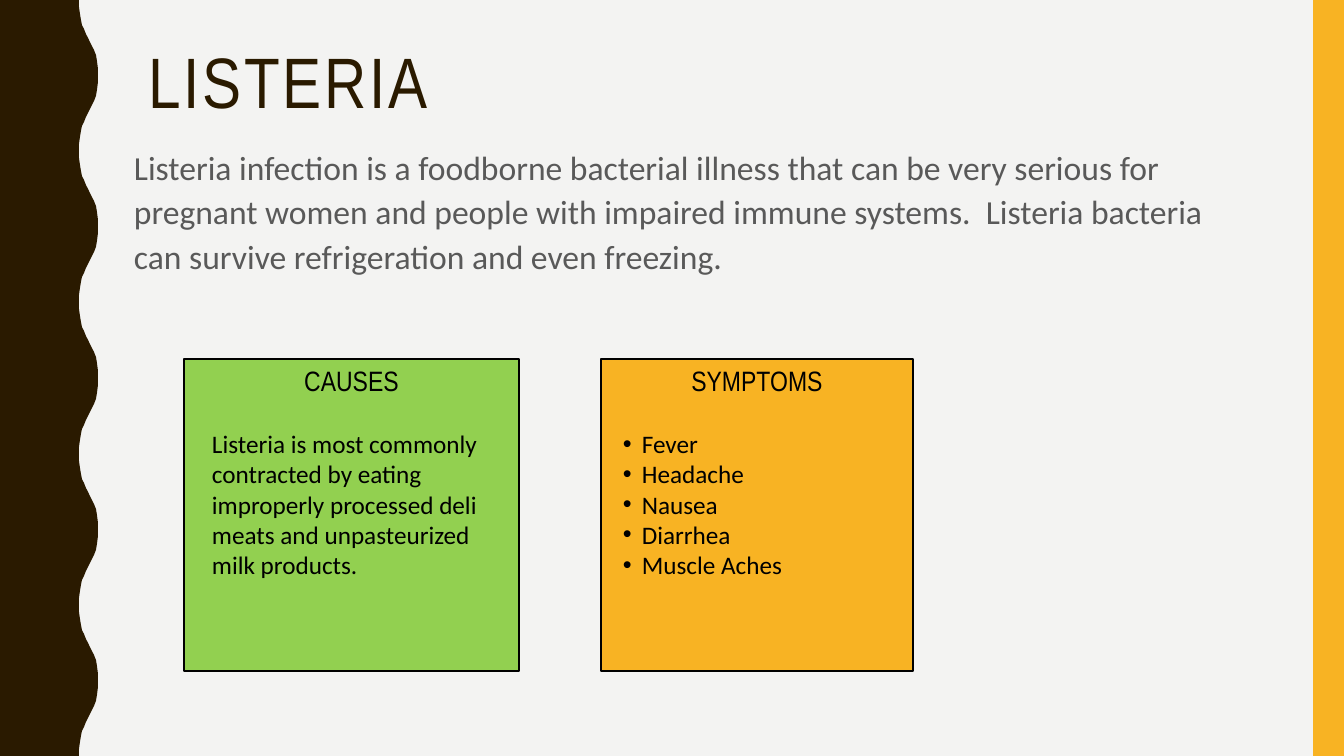
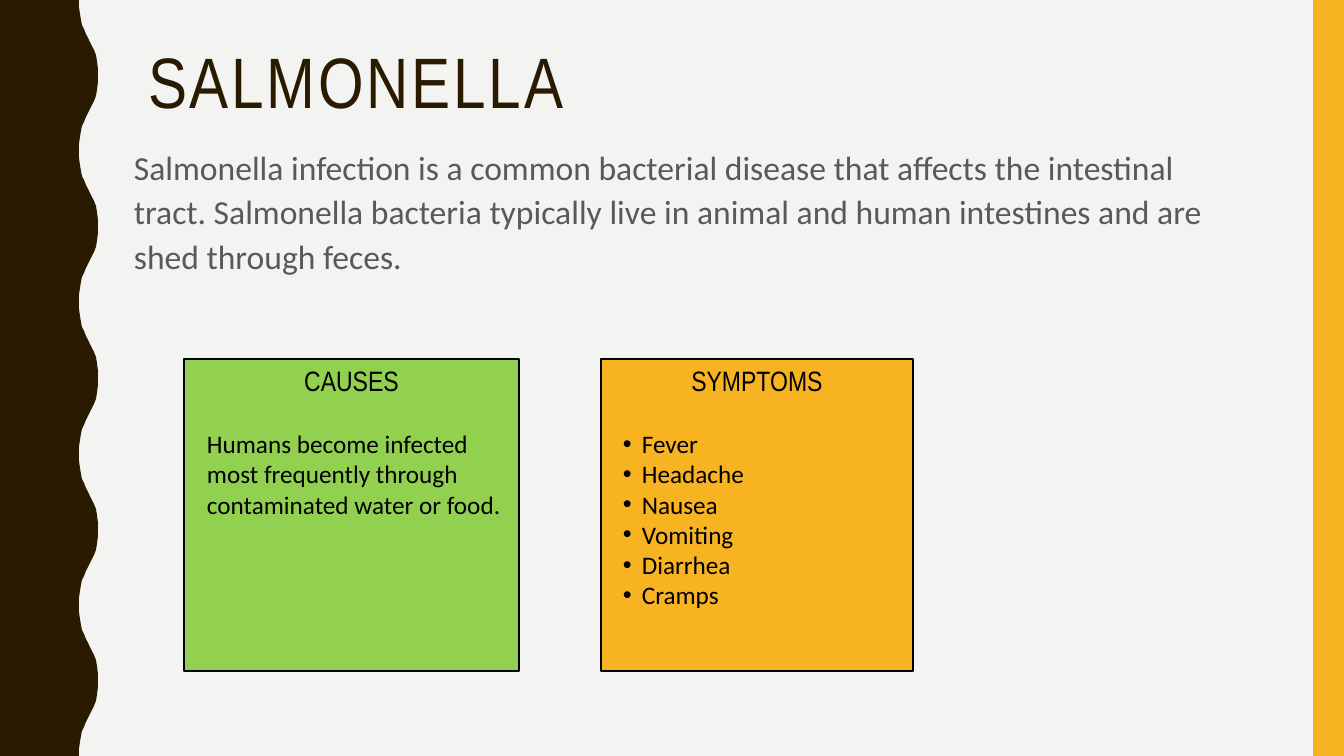
from lxml import etree
from pptx import Presentation
from pptx.dml.color import RGBColor
from pptx.enum.shapes import MSO_SHAPE
from pptx.enum.text import MSO_ANCHOR, MSO_AUTO_SIZE, PP_ALIGN
from pptx.oxml.ns import qn
from pptx.util import Emu, Pt

RECTANGLE = MSO_SHAPE.RECTANGLE
TOP = MSO_ANCHOR.TOP
NO_AUTOFIT = MSO_AUTO_SIZE.NONE
LEFT, CENTER = PP_ALIGN.LEFT, PP_ALIGN.CENTER

PAPER = RGBColor(0xF3, 0xF3, 0xF2)
BROWN = RGBColor(0x2A, 0x1A, 0x00)
AMBER = RGBColor(0xF8, 0xB3, 0x23)
GREEN = RGBColor(0x92, 0xD0, 0x50)
GRAY = RGBColor(0x59, 0x59, 0x59)
BLACK = RGBColor(0x00, 0x00, 0x00)

HEADING_FONT, BODY_FONT = "Arial Narrow", "Calibri"
EMU_PER_PX = 914400 / 100.8
WIDTH, HEIGHT = 1344, 756
WAVE_COUNT = 5
HALF_WAVE = [(79, 0), (79, 7), (80, 14), (81, 20), (82, 25), (84, 29), (86, 34), (88, 38),
             (90, 42), (92, 46), (94, 50), (96, 55), (97, 61), (98, 69), (98, 76)]

ILLNESSES = [
    {
        "title": "LISTERIA",
        "summary": "Listeria infection is a foodborne bacterial illness that can be very serious for "
                   "pregnant women and people with impaired immune systems.  Listeria bacteria can "
                   "survive refrigeration and even freezing.",
        "cause": "Listeria is most commonly contracted by eating improperly processed deli meats "
                 "and unpasteurized milk products.",
        "cause_indent": 18,
        "symptoms": ["Fever", "Headache", "Nausea", "Diarrhea", "Muscle Aches"],
    },
    {
        "title": "SALMONELLA",
        "summary": "Salmonella infection is a common bacterial disease that affects the intestinal "
                   "tract. Salmonella bacteria typically live in animal and human intestines and are "
                   "shed through feces.",
        "cause": "Humans become infected most frequently through contaminated water or food.",
        "cause_indent": 13,
        "symptoms": ["Fever", "Headache", "Nausea", "Vomiting", "Diarrhea", "Cramps"],
    },
]


def px(length):
    """Turn pixels into EMU."""
    return Emu(round(length * EMU_PER_PX))


class IllnessDeck:
    """Holds the shared style and the current slide."""

    def __init__(self):
        """Start an empty deck with the shared background."""
        self.deck = Presentation()
        self.deck.slide_width, self.deck.slide_height = px(WIDTH), px(HEIGHT)
        self.paint(self.deck.slide_master.background, PAPER)
        self.page = None

    @staticmethod
    def paint(target, color):
        """Give a shape or background a solid fill."""
        target.fill.solid()
        target.fill.fore_color.rgb = color

    @staticmethod
    def style(para, font, size, color, align=LEFT):
        """Format the runs and alignment of a paragraph."""
        para.alignment = align
        for span in para.runs:
            span.font.name, span.font.size = font, Pt(size)
            span.font.color.rgb = color

    @staticmethod
    def indent(para, margin, bullet=False):
        """Indent a paragraph and optionally give it a hanging bullet."""
        properties = para._p.get_or_add_pPr()
        properties.set("marL", str(px(margin)))
        properties.set("indent", str(px(-19 if bullet else 0)))
        if bullet:
            etree.SubElement(properties, qn("a:buFont")).set("typeface", "Arial")
            etree.SubElement(properties, qn("a:buChar")).set("char", "•")

    @staticmethod
    def frame(box):
        """Return a wrapping, top-anchored text frame."""
        frame = box.text_frame
        frame.word_wrap, frame.auto_size, frame.vertical_anchor = True, NO_AUTOFIT, TOP
        return frame

    def add_page(self, title):
        """Add a slide with its bands and title."""
        self.page = self.deck.slides.add_slide(self.deck.slide_layouts[5])
        self.wavy_band()
        self.rectangle(1313, 0, WIDTH - 1313, HEIGHT, AMBER)
        self.title(title)

    def wavy_band(self):
        """Draw the left band with its repeated wave."""
        period = HEIGHT / WAVE_COUNT
        wave = HALF_WAVE + [(x, period - y) for x, y in reversed(HALF_WAVE[:-1])]
        edge = [(x, y + period * number) for number in range(WAVE_COUNT) for x, y in wave]
        builder = self.page.shapes.build_freeform(0, 0, scale=EMU_PER_PX)
        builder.add_line_segments(edge + [(0, HEIGHT)], close=True)
        band = builder.convert_to_shape()
        band.shadow.inherit = False
        self.paint(band, BROWN)
        band.line.fill.background()

    def rectangle(self, left, top, width, height, color):
        """Draw a plain filled rectangle."""
        box = self.page.shapes.add_shape(RECTANGLE, px(left), px(top), px(width), px(height))
        box.shadow.inherit = False
        self.paint(box, color)
        box.line.fill.background()
        return box

    def title(self, text):
        """Place and format the title placeholder."""
        box = self.page.shapes.title
        box.left, box.top, box.width, box.height = px(138), px(42), px(1122), px(97)
        para = self.frame(box).paragraphs[0]
        para.text = text
        para.line_spacing = 0.9
        self.style(para, HEADING_FONT, 51, BROWN)
        para.runs[0].font._element.set("spc", "200")

    def summary(self, text):
        """Add the introductory paragraph."""
        box = self.page.shapes.add_textbox(px(124), px(138), px(1122), px(162))
        para = self.frame(box).paragraphs[0]
        para.text = text
        para.line_spacing, para.space_before = 1.1, Pt(7)
        self.style(para, BODY_FONT, 24, GRAY)

    def card(self, left, width, color, heading, lines, margin, bullet=False):
        """Add an outlined card with a heading and body lines."""
        box = self.rectangle(left, 359, width, 312, color)
        box.line.color.rgb, box.line.width = BLACK, Pt(1)
        frame = self.frame(box)
        head = frame.paragraphs[0]
        head.text = heading
        head.space_after = Pt(22)
        self.style(head, HEADING_FONT, 20, BLACK, CENTER)
        for line in lines:
            para = frame.add_paragraph()
            para.text = line
            self.style(para, BODY_FONT, 18, BLACK)
            self.indent(para, margin, bullet)


def main():
    """Build and save the deck."""
    builder = IllnessDeck()
    for illness in ILLNESSES:
        builder.add_page(illness["title"])
        builder.summary(illness["summary"])
        builder.card(184, 335, GREEN, "CAUSES", [illness["cause"]], illness["cause_indent"])
        builder.card(601, 312, AMBER, "SYMPTOMS", illness["symptoms"], 31, bullet=True)
    builder.deck.save("out.pptx")


if __name__ == "__main__":
    main()
